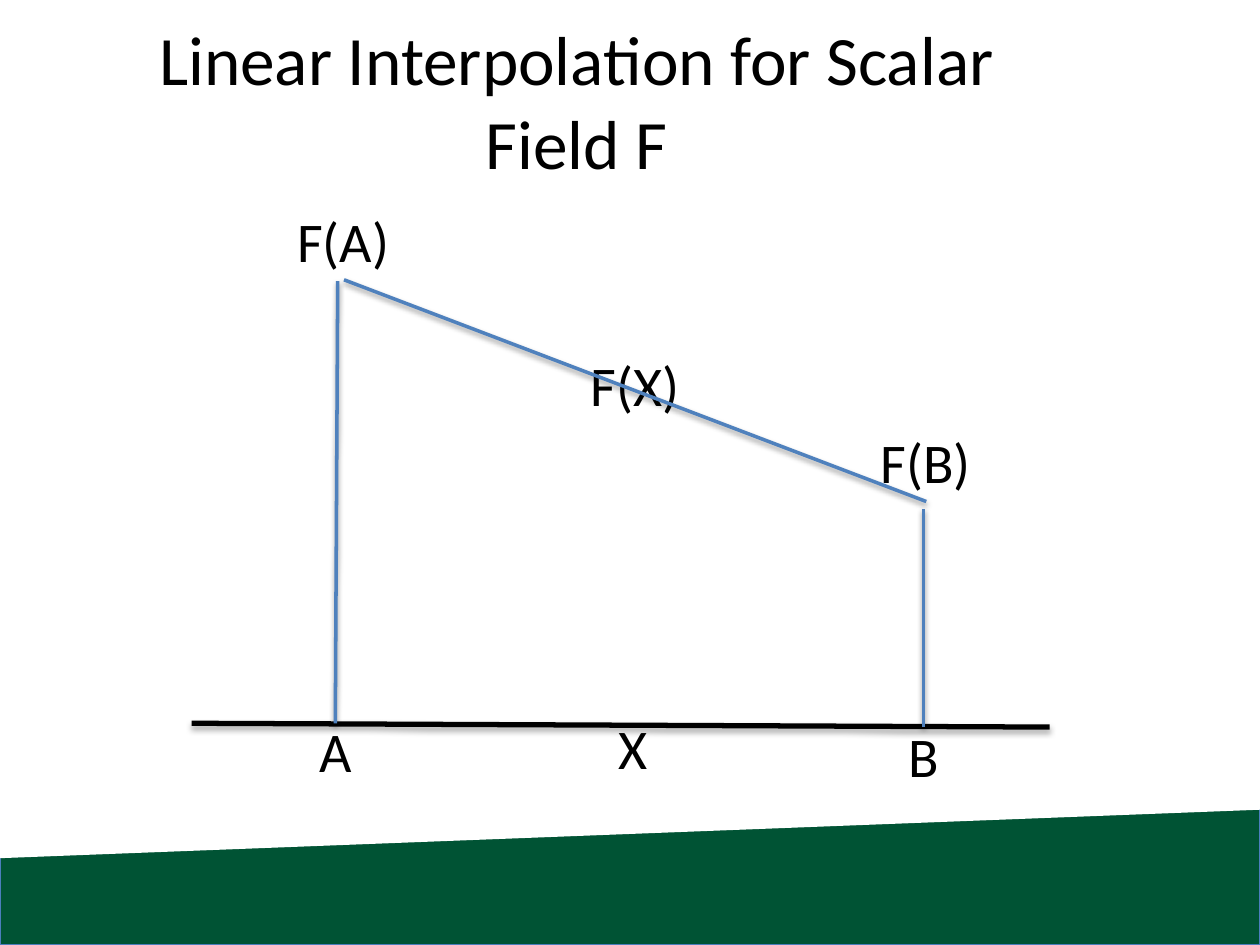
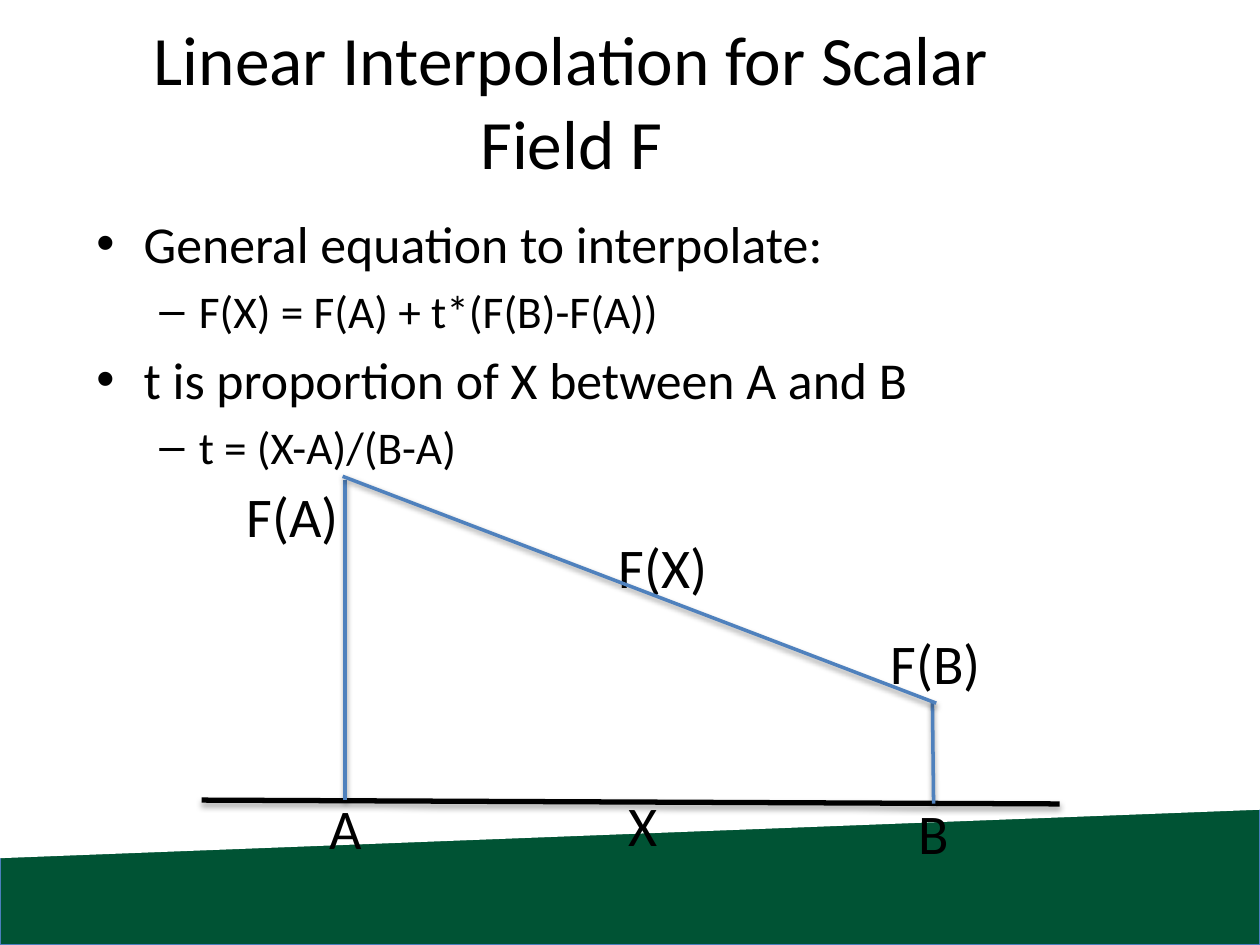
from collections import namedtuple
from dataclasses import dataclass

from lxml import etree
from pptx import Presentation
from pptx.dml.color import RGBColor
from pptx.enum.shapes import MSO_CONNECTOR, MSO_SHAPE
from pptx.enum.text import MSO_ANCHOR, MSO_AUTO_SIZE, PP_ALIGN
from pptx.oxml.ns import qn
from pptx.util import Pt

STRAIGHT = MSO_CONNECTOR.STRAIGHT
RECTANGLE, PARALLELOGRAM = MSO_SHAPE.RECTANGLE, MSO_SHAPE.PARALLELOGRAM
MIDDLE, CENTER = MSO_ANCHOR.MIDDLE, PP_ALIGN.CENTER
FIT_SHAPE = MSO_AUTO_SIZE.SHAPE_TO_FIT_TEXT

SLIDE_W, SLIDE_H = 720, 540

Box = namedtuple("Box", "x y w h")
Level = namedtuple("Level", "size margin hang bullet")
# Heights and label places are measured from the left end of the axis.
Plot = namedtuple("Plot", "x y top_a top_b slope_from slope_to labels")


@dataclass(frozen=True)
class Theme:
    font: str = "Calibri"
    ink: RGBColor = RGBColor(0, 0, 0)
    paper: RGBColor = RGBColor(255, 255, 255)
    green: RGBColor = RGBColor(0x00, 0x53, 0x34)
    band_edge: RGBColor = RGBColor(0x4B, 0x7E, 0xBC)
    blue: RGBColor = RGBColor(0x4F, 0x81, 0xBD)
    title_size: float = 39.6
    label_size: float = 32
    axis_width: float = 3
    curve_width: float = 2
    levels: tuple = (Level(29.6, 27, 27, "•"), Level(25.9, 58.5, 22.5, "–"))


THEME = Theme()
TITLE = "Linear Interpolation for Scalar Field F"
AXIS_END = (490.3, 2.2)
POST_A, POST_B = (82.1, 0), (418.3, 2)
AXIS_LABELS = {"A": (66.2, -7.2), "X": (236.9, -9), "B": (402.5, -4.7)}
LABEL_WIDTHS = {"A": 33, "X": 31, "B": 33, "F(A)": 67.5, "F(X)": 65.5, "F(B)": 66.5}
LABEL_H = 46

TALL_PLOT = Plot(
    109.5, 413.3, (83.5, -252.7), (418.3, -122.4), (87.1, -253.4), (419.8, -126.7),
    {"F(A)": (53.3, -298.8), "F(X)": (221, -216.7), "F(B)": (386.6, -172.8)})
LOW_PLOT = Plot(
    115.2, 457.2, (82.1, -182.9), (417.6, -56.5), (80.6, -185), (419.8, -55.4),
    {"F(A)": (18.7, -185.8), "F(X)": (231.1, -156.2), "F(B)": (386.6, -101.5)})
BULLETS = [
    (0, "General equation to interpolate:"),
    (1, "F(X) = F(A) + t*(F(B)-F(A))"),
    (0, "t is proportion of X between A and B"),
    (1, "t = (X-A)/(B-A)"),
]


def add_run(p, text, size):
    r = p.add_run()
    r.text = text
    r.font.name = THEME.font
    r.font.size = Pt(size)
    r.font.color.rgb = THEME.ink


def add_text_box(slide, box, wrap=True):
    s = slide.shapes.add_textbox(*map(Pt, box))
    s.text_frame.word_wrap = wrap
    return s.text_frame


def add_filled_shape(slide, kind, box, color):
    s = slide.shapes.add_shape(kind, *map(Pt, box))
    s.shadow.inherit = False
    s.fill.solid()
    s.fill.fore_color.rgb = color
    return s


def add_band(slide, box):
    """Green band at the foot, cut on a slant by a white parallelogram."""
    band = add_filled_shape(slide, RECTANGLE, box, THEME.green)
    band.line.color.rgb = THEME.band_edge
    band.line.width = Pt(0.75)

    # The cover is upright before it is turned by a quarter about its centre.
    cover_w, cover_h = 167, box.w
    center_x, center_y = box.x + box.w / 2, box.y + 2.9
    cover = Box(center_x - cover_w / 2, center_y - cover_h / 2, cover_w, cover_h)
    s = add_filled_shape(slide, PARALLELOGRAM, cover, THEME.paper)
    s.line.fill.background()
    s.adjustments[0] = 0.166
    s.rotation = 90
    s._element.spPr.find(qn("a:xfrm")).set("flipH", "1")


def add_title(slide, box):
    tf = add_text_box(slide, box)
    tf.vertical_anchor = MIDDLE
    p = tf.paragraphs[0]
    p.alignment = CENTER
    add_run(p, TITLE, THEME.title_size)


def add_bullets(slide, box, items):
    tf = add_text_box(slide, box)
    for i, (depth, text) in enumerate(items):
        level = THEME.levels[depth]
        p = tf.add_paragraph() if i else tf.paragraphs[0]
        p.level = depth
        p_pr = p._p.get_or_add_pPr()
        p_pr.set("marL", str(Pt(level.margin)))
        p_pr.set("indent", str(-Pt(level.hang)))
        if i:
            p.space_before = Pt(round(level.size * 0.2, 1))
        etree.SubElement(p_pr, qn("a:buFont")).set("typeface", "Arial")
        etree.SubElement(p_pr, qn("a:buChar")).set("char", level.bullet)
        add_run(p, text, level.size)


def add_shadow(s, opacity, distance):
    effects = etree.SubElement(s._element.spPr, qn("a:effectLst"))
    shadow = etree.SubElement(
        effects, qn("a:outerShdw"), blurRad=str(Pt(3.1)), dist=str(Pt(distance)),
        dir="5400000", rotWithShape="0")
    color = etree.SubElement(shadow, qn("a:srgbClr"), val=str(THEME.ink))
    etree.SubElement(color, qn("a:alpha"), val=str(opacity * 1000))


def add_plot(slide, plot):
    def line(start, end, color=THEME.blue, width=THEME.curve_width, shadow=(38, 1.6)):
        s = slide.shapes.add_connector(
            STRAIGHT, Pt(plot.x + start[0]), Pt(plot.y + start[1]),
            Pt(plot.x + end[0]), Pt(plot.y + end[1]))
        s.line.color.rgb = color
        s.line.width = Pt(width)
        add_shadow(s, *shadow)

    line((0, 0), AXIS_END, THEME.ink, THEME.axis_width, (35, 1.8))
    line(POST_A, plot.top_a)
    line(POST_B, plot.top_b)
    for text, (x, y) in {**AXIS_LABELS, **plot.labels}.items():
        box = Box(plot.x + x, plot.y + y, LABEL_WIDTHS[text], LABEL_H)
        tf = add_text_box(slide, box, wrap=False)
        tf.auto_size = FIT_SHAPE
        add_run(tf.paragraphs[0], text, THEME.label_size)
    line(plot.slope_from, plot.slope_to)


def add_slide(prs, title_w, plot, bullets=()):
    slide = prs.slides.add_slide(prs.slide_layouts[6])
    add_band(slide, Box(0, 404, SLIDE_W, SLIDE_H - 404))
    add_title(slide, Box(48, 18, title_w, 78))
    if bullets:
        add_bullets(slide, Box(48, 117.4, 584.6, 152.6), bullets)
    add_plot(slide, plot)


def main():
    prs = Presentation()
    prs.slide_width, prs.slide_height = Pt(SLIDE_W), Pt(SLIDE_H)
    add_slide(prs, 563, TALL_PLOT)
    add_slide(prs, 557, LOW_PLOT, BULLETS)
    prs.save("out.pptx")


if __name__ == "__main__":
    main()
